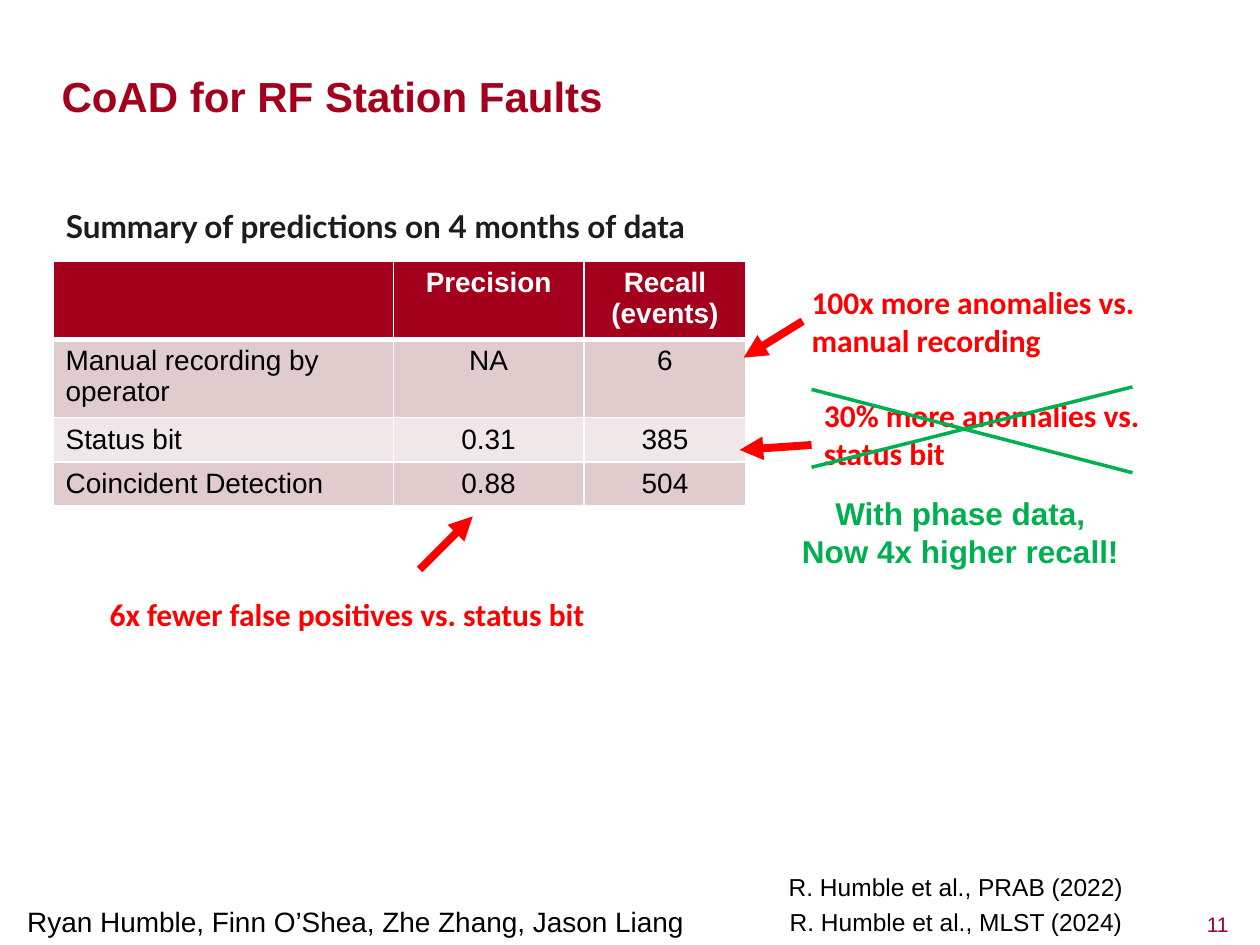
from dataclasses import dataclass
from lxml.etree import SubElement
from pptx import Presentation
from pptx.dml.color import RGBColor
from pptx.enum.shapes import MSO_CONNECTOR
from pptx.enum.text import MSO_ANCHOR, MSO_AUTO_SIZE, PP_ALIGN
from pptx.oxml.ns import qn
from pptx.util import Cm, Pt


@dataclass
class Theme:
    wine: str = "A4001D"
    red: str = "FF0000"
    green: str = "00B050"
    ink: str = "1D1C1D"
    black: str = "000000"
    white: str = "FFFFFF"
    rose: str = "E0CCCD"
    pale: str = "F0E7E8"
    head: int = 24
    note: int = 18
    body: int = 16
    cite: int = 14
    page: int = 12


theme = Theme()


def write(frame, text, size=theme.note, font="Arial", color=theme.black, bold=False,
          align=PP_ALIGN.LEFT, wrap=True, pad=(0.25, 0.13), anchor=MSO_ANCHOR.TOP,
          fit=MSO_AUTO_SIZE.SHAPE_TO_FIT_TEXT):
    frame.word_wrap = wrap
    frame.auto_size = fit
    frame.vertical_anchor = anchor
    frame.margin_left = frame.margin_right = Cm(pad[0])
    frame.margin_top = frame.margin_bottom = Cm(pad[1])
    frame.text = text
    for para in frame.paragraphs:
        para.alignment = align
        for run in para.runs:
            run.font.size = Pt(size)
            run.font.name = font
            run.font.bold = bold
            run.font.color.rgb = RGBColor.from_string(color)


def draw(ends, color, width, arrow=False):
    line = slide.shapes.add_connector(MSO_CONNECTOR.STRAIGHT, *map(Cm, ends))
    line.line.color.rgb = RGBColor.from_string(color)
    line.line.width = Pt(width)
    if arrow:
        SubElement(line.line._get_or_add_ln(), qn("a:tailEnd"), type="triangle")
    SubElement(line._element.spPr, qn("a:effectLst"))
    return line


deck = Presentation()
deck.slide_width, deck.slide_height = Cm(25.4), Cm(19.05)
slide = deck.slides.add_slide(deck.slide_layouts[5])

title = slide.shapes.title
title.left, title.top, title.width, title.height = map(Cm, (1.24, 0.36, 22.5, 2.08))
write(title.text_frame, "CoAD for RF Station Faults", size=theme.head, color=theme.wine,
      bold=True, pad=(0, 0), anchor=MSO_ANCHOR.BOTTOM, fit=MSO_AUTO_SIZE.NONE)

rows = [
    ("", "Precision", "Recall (events)"),
    ("Manual recording by operator", "NA", "6"),
    ("Status bit", "0.31", "385"),
    ("Coincident Detection", "0.88", "504"),
]
table = slide.shapes.add_table(4, 3, Cm(1.07), Cm(5.26), Cm(13.97), Cm(4.94)).table
for col, width in zip(table.columns, (6.86, 3.84, 3.27)):
    col.width = Cm(width)
for row, height in zip(table.rows, (1.58, 1.58, 0.89, 0.89)):
    row.height = Cm(height)
fills = (theme.wine, theme.rose, theme.pale, theme.rose)
for r, row in enumerate(rows):
    for c, text in enumerate(row):
        cell = table.cell(r, c)
        props = cell._tc.get_or_add_tcPr()
        for side in "LRTB":
            thick = (r, side) in ((0, "B"), (1, "T"))
            edge = SubElement(props, qn("a:ln" + side), w=str(Pt(3 if thick else 1)))
            SubElement(SubElement(edge, qn("a:solidFill")), qn("a:srgbClr"), val=theme.white)
        cell.fill.solid()
        cell.fill.fore_color.rgb = RGBColor.from_string(fills[r])
        cell.text = text
        para = cell.text_frame.paragraphs[0]
        para.alignment = PP_ALIGN.CENTER if c else PP_ALIGN.LEFT
        para.font.size = Pt(theme.body)
        para.font.name = "Arial"
        para.font.bold = r == 0
        para.font.color.rgb = RGBColor.from_string(theme.black if r else theme.white)

claim = dict(font="Calibri", color=theme.red, bold=True)
tight = dict(claim, pad=(0.18, 0.1))
cite = dict(size=theme.cite)
notes = [
    ((24.13, 18.21, 1.27, 0.84), "11",
     dict(size=theme.page, color=theme.wine, pad=(0.2, 0.14), anchor=MSO_ANCHOR.MIDDLE,
          fit=MSO_AUTO_SIZE.NONE)),
    ((2.03, 11.89, 12.01, 0.97), "6x fewer false positives vs. status bit", tight),
    ((16.18, 5.61, 7.6, 1.73), "100x more anomalies vs. manual recording", tight),
    ((16.36, 7.85, 7.98, 1.8), "30% more anomalies vs. status bit", claim),
    ((0.23, 4.04, 14.68, 1.02), "Summary of predictions on 4 months of data",
     dict(font="Lato", color=theme.ink, bold=True, align=PP_ALIGN.CENTER)),
    ((0.3, 18.11, 13.89, 0.94), "Ryan Humble, Finn O’Shea, Zhe Zhang, Jason Liang",
     dict(size=theme.body, wrap=False)),
    ((15.65, 17.45, 7.82, 0.86), "R. Humble et al., PRAB (2022)", cite),
    ((15.67, 18.16, 7.82, 0.86), "R. Humble et al., MLST (2024)", cite),
    ((15.88, 9.83, 6.96, 1.8), "With phase data,\nNow 4x higher recall!",
     dict(color=theme.green, bold=True, align=PP_ALIGN.CENTER, wrap=False)),
]
boxes = {}
for place, text, form in notes:
    boxes[text] = slide.shapes.add_textbox(*map(Cm, place))
    write(boxes[text].text_frame, text, **form)

draw((8.46, 11.48, 9.53, 10.41), theme.red, 4.5, arrow=True)
draw((16.36, 8.97, 14.91, 9.07), theme.red, 4.5, arrow=True)
link = draw((16.18, 6.48, 14.99, 7.21), theme.red, 4.5, arrow=True)
link.begin_connect(boxes["100x more anomalies vs. manual recording"], 1)
for start, stop in ((7.85, 9.53), (9.42, 7.8)):
    draw((16.36, start, 22.83, stop), theme.green, 2)

deck.save("out.pptx")
